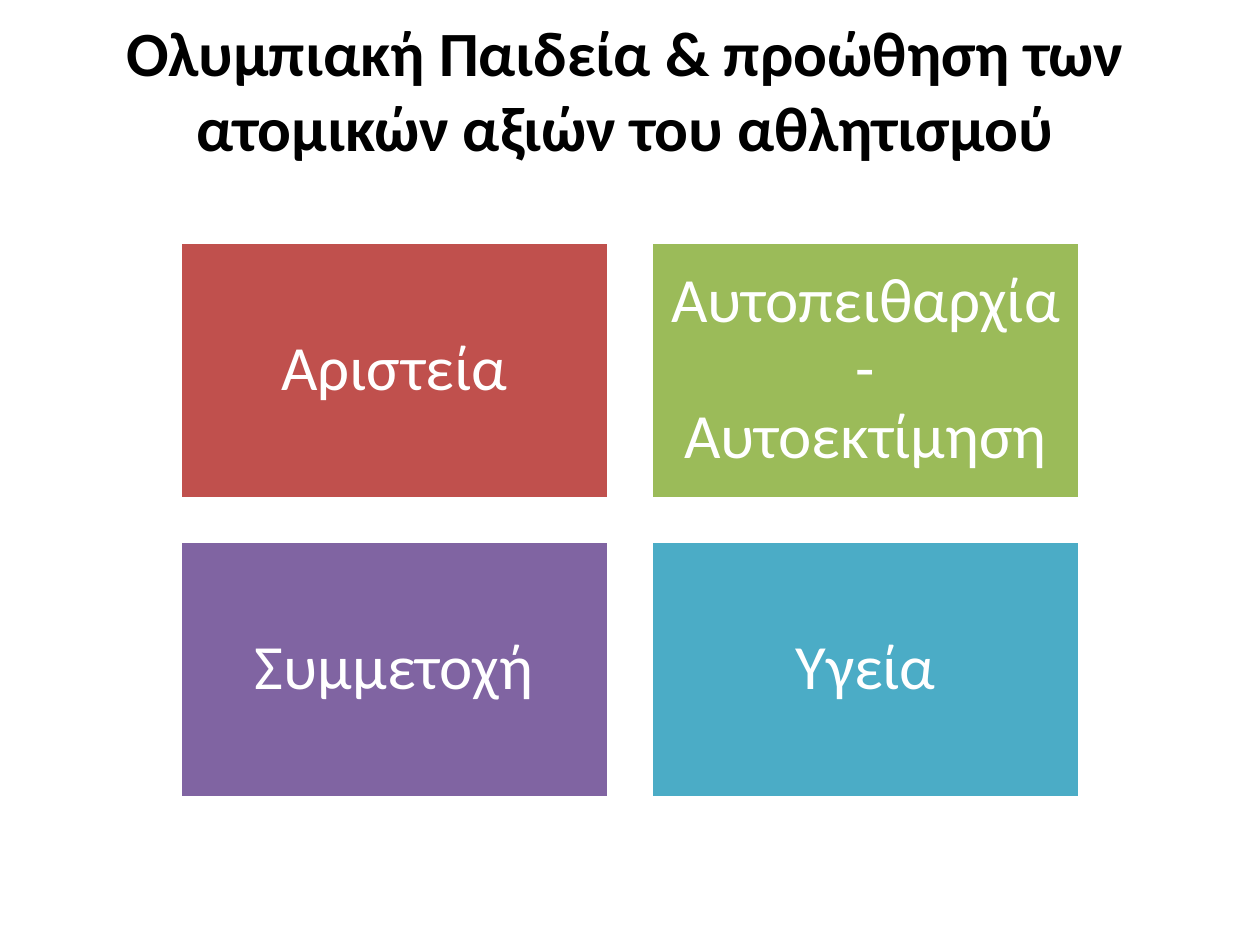
from dataclasses import dataclass

from pptx import Presentation
from pptx.dml.color import RGBColor
from pptx.enum.shapes import MSO_SHAPE
from pptx.enum.text import MSO_ANCHOR, MSO_AUTO_SIZE, PP_ALIGN
from pptx.util import Inches, Pt


@dataclass(frozen=True)
class Theme:
    """Colours, font and type sizes of the slide."""
    font: str = "Calibri"
    title_size: int = 36
    card_size: int = 36
    dark: str = "000000"
    light: str = "FFFFFF"
    red: str = "C0504D"
    green: str = "9BBB59"
    purple: str = "8064A2"
    blue: str = "4BACC6"


THEME = Theme()
TITLE = "Ολυμπιακή Παιδεία & προώθηση των ατομικών αξιών του αθλητισμού"
VALUES = [
    ("Αριστεία", THEME.red),
    ("Αυτοπειθαρχία - Αυτοεκτίμηση", THEME.green),
    ("Συμμετοχή", THEME.purple),
    ("Υγεία", THEME.blue),
]


def write_text(tf, text, size, color, bold=False, line_spacing=1.0, inset=None):
    """Write one centred paragraph into a text frame."""
    tf.word_wrap = True
    tf.auto_size = MSO_AUTO_SIZE.NONE
    tf.vertical_anchor = MSO_ANCHOR.MIDDLE
    if inset is not None:
        tf.margin_left = tf.margin_right = Inches(inset)
        tf.margin_top = tf.margin_bottom = Inches(inset)
    p = tf.paragraphs[0]
    p.alignment = PP_ALIGN.CENTER
    p.line_spacing = line_spacing
    r = p.add_run()
    r.text = text
    r.font.name = THEME.font
    r.font.size = Pt(size)
    r.font.bold = bold
    r.font.color.rgb = RGBColor.from_string(color)


def place_title(s, left, top, width, height):
    """Move and fill the title placeholder."""
    sp = s.shapes.title
    sp.left, sp.top = Inches(left), Inches(top)
    sp.width, sp.height = Inches(width), Inches(height)
    write_text(sp.text_frame, TITLE, THEME.title_size, THEME.dark, bold=True)


def add_card(s, text, fill, left, top, width, height):
    """Add one coloured card with its value."""
    sp = s.shapes.add_shape(MSO_SHAPE.RECTANGLE, Inches(left), Inches(top),
                            Inches(width), Inches(height))
    sp.shadow.inherit = False
    sp.fill.solid()
    sp.fill.fore_color.rgb = RGBColor.from_string(fill)
    sp.line.color.rgb = RGBColor.from_string(THEME.light)
    sp.line.width = Pt(2)
    write_text(sp.text_frame, text, THEME.card_size, THEME.light,
               line_spacing=0.9, inset=0.15)


def add_value_grid(s, left, top, width, height, columns=2, gap=0.34):
    """Lay the value cards out in an even grid."""
    rows = -(-len(VALUES) // columns)
    card_w = (width - gap * (columns - 1)) / columns
    card_h = (height - gap * (rows - 1)) / rows
    for i, (text, fill) in enumerate(VALUES):
        row, col = divmod(i, columns)
        add_card(s, text, fill, left + col * (card_w + gap),
                 top + row * (card_h + gap), card_w, card_h)


def main():
    """Build and save the slide."""
    prs = Presentation()
    prs.slide_width, prs.slide_height = Inches(10), Inches(7.5)
    s = prs.slides.add_slide(prs.slide_layouts[5])
    place_title(s, 0.25, 0.08, 9.42, 1.25)
    add_value_grid(s, 1.43, 1.92, 7.14, 4.41)
    prs.save("out.pptx")


if __name__ == "__main__":
    main()
